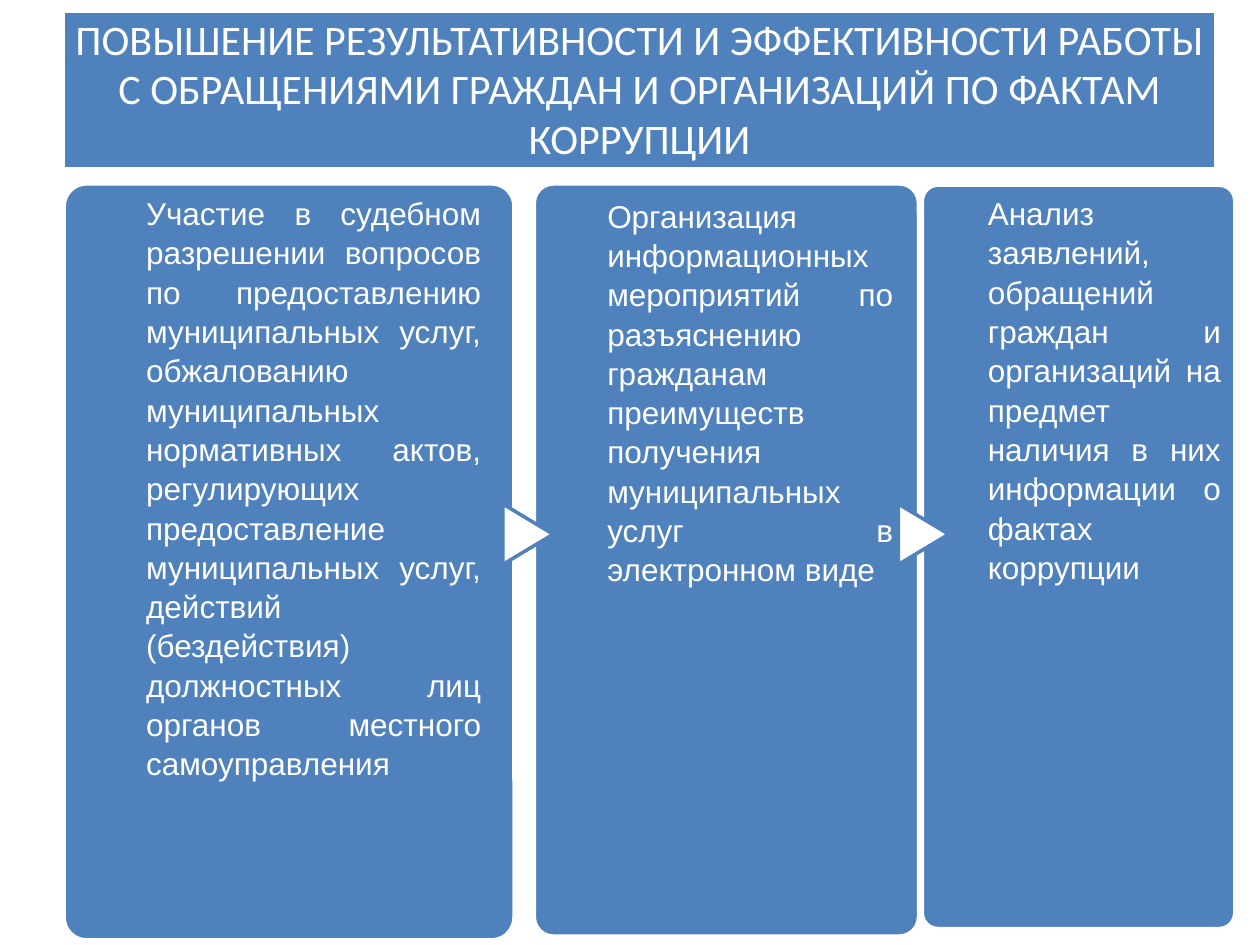
from pptx import Presentation
from pptx.dml.color import RGBColor
from pptx.enum import shapes, text
from pptx.util import Inches, Pt

COLORS = {"blue": "4F81BD", "white": "FFFFFF"}

TITLE = ("ПОВЫШЕНИЕ РЕЗУЛЬТАТИВНОСТИ И ЭФФЕКТИВНОСТИ РАБОТЫ С ОБРАЩЕНИЯМИ "
         "ГРАЖДАН И ОРГАНИЗАЦИЙ ПО ФАКТАМ КОРРУПЦИИ")

# Panel box, text left and width, top inset, text
PANELS = [
    ((0.51, 1.46, 3.57, 6), (1.16, 2.66), 0.07,
     "Участие в судебном разрешении вопросов по предоставлению "
     "муниципальных услуг, обжалованию муниципальных нормативных актов, "
     "регулирующих предоставление муниципальных услуг, действий "
     "(бездействия) должностных лиц органов местного самоуправления"),
    ((4.24, 1.46, 3.05, 5.97), (4.82, 2.27), 0.09,
     "Организация информационных мероприятий по разъяснению гражданам "
     "преимуществ получения муниципальных услуг в электронном виде"),
    ((7.32, 1.47, 2.48, 5.9), (7.84, 1.85), 0.06,
     "Анализ заявлений, обращений граждан и организаций на предмет наличия "
     "в них информации о фактах коррупции"),
]
ARROW_LEFTS = [None, 3.95, 7.09]  # the first panel has no arrow before it


def color(name):
    return RGBColor.from_string(COLORS[name])


def add_box(s, kind, box, fill="blue", line="white"):
    sp = s.shapes.add_shape(kind, *map(Inches, box))
    sp.shadow.inherit = False
    sp.fill.solid()
    sp.fill.fore_color.rgb = color(fill)
    sp.line.color.rgb = color(line)
    sp.line.width = Pt(2)
    return sp


def set_text(sp, content, size=18, font="Arial", align=text.PP_ALIGN.JUSTIFY,
             anchor=text.MSO_ANCHOR.TOP, top=0, spacing=1.04):
    tf = sp.text_frame
    tf.word_wrap = True
    tf.vertical_anchor = anchor
    tf.margin_left = tf.margin_right = tf.margin_bottom = 0
    tf.margin_top = Inches(top)
    p = tf.paragraphs[0]
    p.alignment = align
    p.line_spacing = spacing
    r = p.add_run()
    r.text = content
    r.font.size = Pt(size)
    r.font.name = font
    r.font.color.rgb = color("white")


def add_arrow(s, left):
    sp = add_box(s, shapes.MSO_SHAPE.FLOWCHART_EXTRACT, (left, 4.04, 0.48, 0.4),
                 fill="white", line="blue")
    sp.rotation = 90


def add_panel(s, box, text_span, top, content, arrow_left):
    sp = add_box(s, shapes.MSO_SHAPE.ROUNDED_RECTANGLE, box)
    sp.adjustments[0] = 0.05
    if arrow_left is not None:
        add_arrow(s, arrow_left)
    left, width = text_span
    tb = s.shapes.add_textbox(*map(Inches, (left, box[1], width, box[3])))
    set_text(tb, content, top=top)


def main():
    prs = Presentation()
    prs.slide_width, prs.slide_height = Inches(10), Inches(7.5)
    s = prs.slides.add_slide(prs.slide_layouts[6])

    # Panels with the arrows that lead into them
    for panel, arrow_left in zip(PANELS, ARROW_LEFTS):
        add_panel(s, *panel, arrow_left)

    # Title bar
    title = add_box(s, shapes.MSO_SHAPE.RECTANGLE, (0.5, 0.09, 9.15, 1.25))
    set_text(title, TITLE, size=24, font="Calibri", align=text.PP_ALIGN.CENTER,
             anchor=text.MSO_ANCHOR.MIDDLE, spacing=0.98)

    prs.save("out.pptx")


if __name__ == "__main__":
    main()
